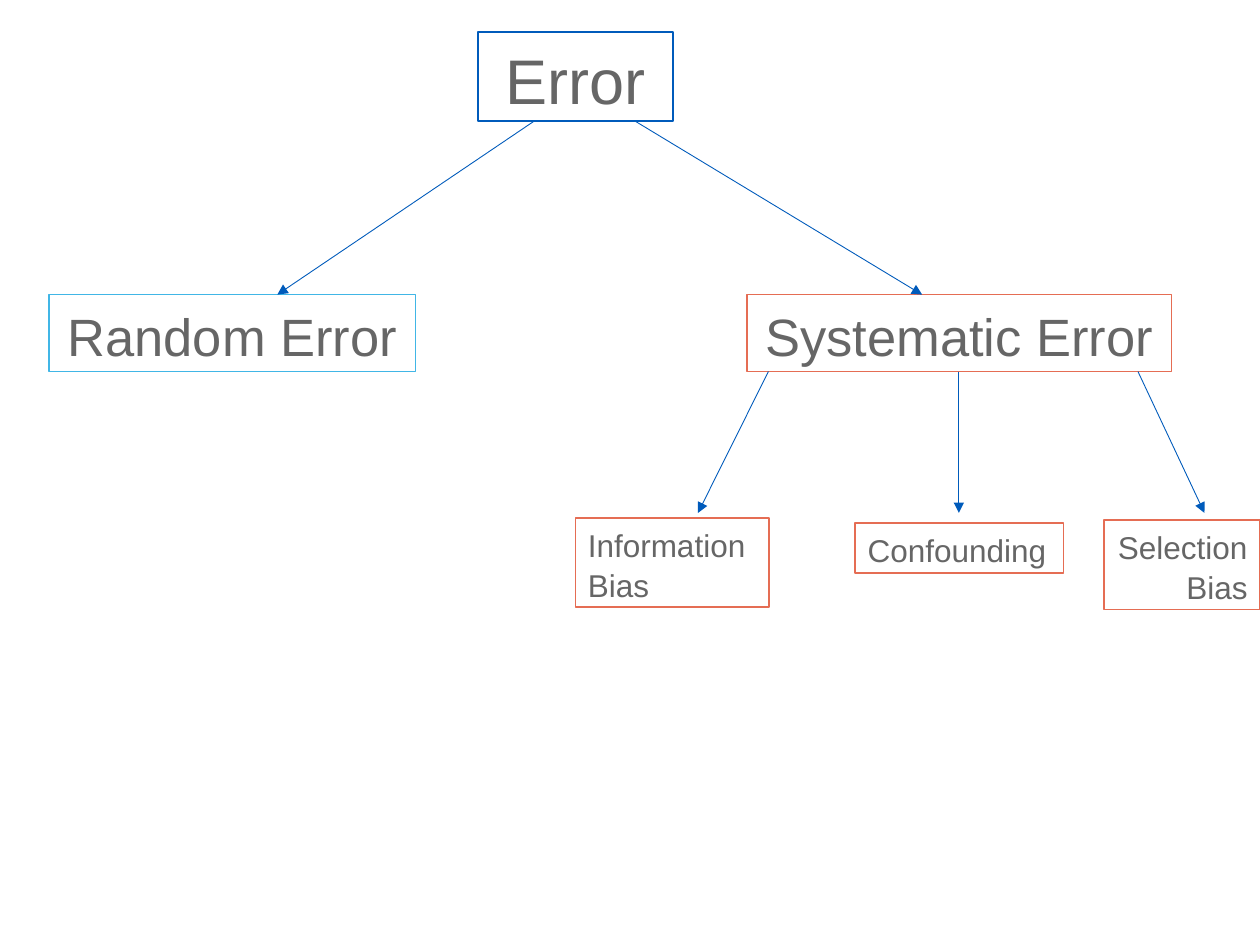
"""Build a tree slide that splits error into random and systematic kinds."""
from typing import NamedTuple

from lxml.etree import SubElement
from pptx import Presentation
from pptx.dml.color import RGBColor
from pptx.enum.shapes import MSO_CONNECTOR, MSO_SHAPE
from pptx.enum.text import MSO_ANCHOR, PP_ALIGN
from pptx.oxml.ns import qn
from pptx.slide import Slide
from pptx.util import Cm, Pt

BLUE = RGBColor(0x00, 0x5B, 0xBB)
SKY = RGBColor(0x41, 0xB6, 0xE6)
CORAL = RGBColor(0xE5, 0x6D, 0x54)
GRAY = RGBColor(0x66, 0x66, 0x66)
WHITE = RGBColor(0xFF, 0xFF, 0xFF)

ROOT_BOTTOM = 2.44
KIND_TOP, KIND_HEIGHT = 5.94, 1.55
KIND_BOTTOM = KIND_TOP + KIND_HEIGHT
BIAS_TIP = 10.34


class Node(NamedTuple):
    text: str
    left: float
    top: float
    width: float
    height: float
    size: int
    color: RGBColor
    align: PP_ALIGN = PP_ALIGN.CENTER


class Branch(NamedTuple):
    start_x: float
    start_y: float
    end_x: float
    end_y: float


NODES = [
    Node("Error", 9.63, 0.64, 3.94, 1.8, 36, BLUE),
    Node("Systematic Error", 15.06, KIND_TOP, 8.56, KIND_HEIGHT, 30, CORAL),
    Node("Random Error", 0.99, KIND_TOP, 7.39, KIND_HEIGHT, 30, SKY),
    Node("Information Bias", 11.6, 10.44, 3.9, 1.8, 18, CORAL, PP_ALIGN.LEFT),
    Node("Confounding", 17.24, 10.54, 4.2, 1.02, 18, CORAL, PP_ALIGN.LEFT),
    Node("Selection Bias", 22.25, 10.49, 3.15, 1.8, 18, CORAL, PP_ALIGN.RIGHT),
]

BRANCHES = [
    Branch(10.77, ROOT_BOTTOM, 5.59, KIND_TOP),
    Branch(12.8, ROOT_BOTTOM, 18.59, KIND_TOP),
    Branch(15.49, KIND_BOTTOM, 14.07, BIAS_TIP),
    Branch(19.33, KIND_BOTTOM, 19.33, BIAS_TIP),
    Branch(22.94, KIND_BOTTOM, 24.28, BIAS_TIP),
]


def write_text(box, text: str, *, size: int, color: RGBColor, align: PP_ALIGN) -> None:
    frame = box.text_frame
    frame.word_wrap = True
    frame.vertical_anchor = MSO_ANCHOR.TOP
    para = frame.paragraphs[0]
    para.alignment = align
    para.line_spacing = 1.05
    span = para.add_run()
    span.text = text
    span.font.name = "Arial"
    span.font.size = Pt(size)
    span.font.color.rgb = color


def draw_node(page: Slide, node: Node) -> None:
    box = page.shapes.add_shape(
        MSO_SHAPE.RECTANGLE, Cm(node.left), Cm(node.top), Cm(node.width), Cm(node.height)
    )
    box.shadow.inherit = False
    box.fill.solid()
    box.fill.fore_color.rgb = WHITE
    box.line.color.rgb = node.color
    box.line.width = Pt(1)
    write_text(box, node.text, size=node.size, color=GRAY, align=node.align)


def draw_branch(page: Slide, branch: Branch) -> None:
    arrow = page.shapes.add_connector(
        MSO_CONNECTOR.STRAIGHT, *(Cm(length) for length in branch)
    )
    arrow.line.color.rgb = BLUE
    arrow.line.width = Pt(0.5)
    SubElement(arrow.line._get_or_add_ln(), qn("a:tailEnd"), type="triangle")
    SubElement(arrow._element.spPr, qn("a:effectLst"))


def main() -> None:
    deck = Presentation()
    deck.slide_width, deck.slide_height = Cm(25.4), Cm(19.05)
    page = deck.slides.add_slide(deck.slide_layouts[6])
    for node in NODES:
        draw_node(page, node)
    for branch in BRANCHES:
        draw_branch(page, branch)
    deck.save("out.pptx")


if __name__ == "__main__":
    main()
